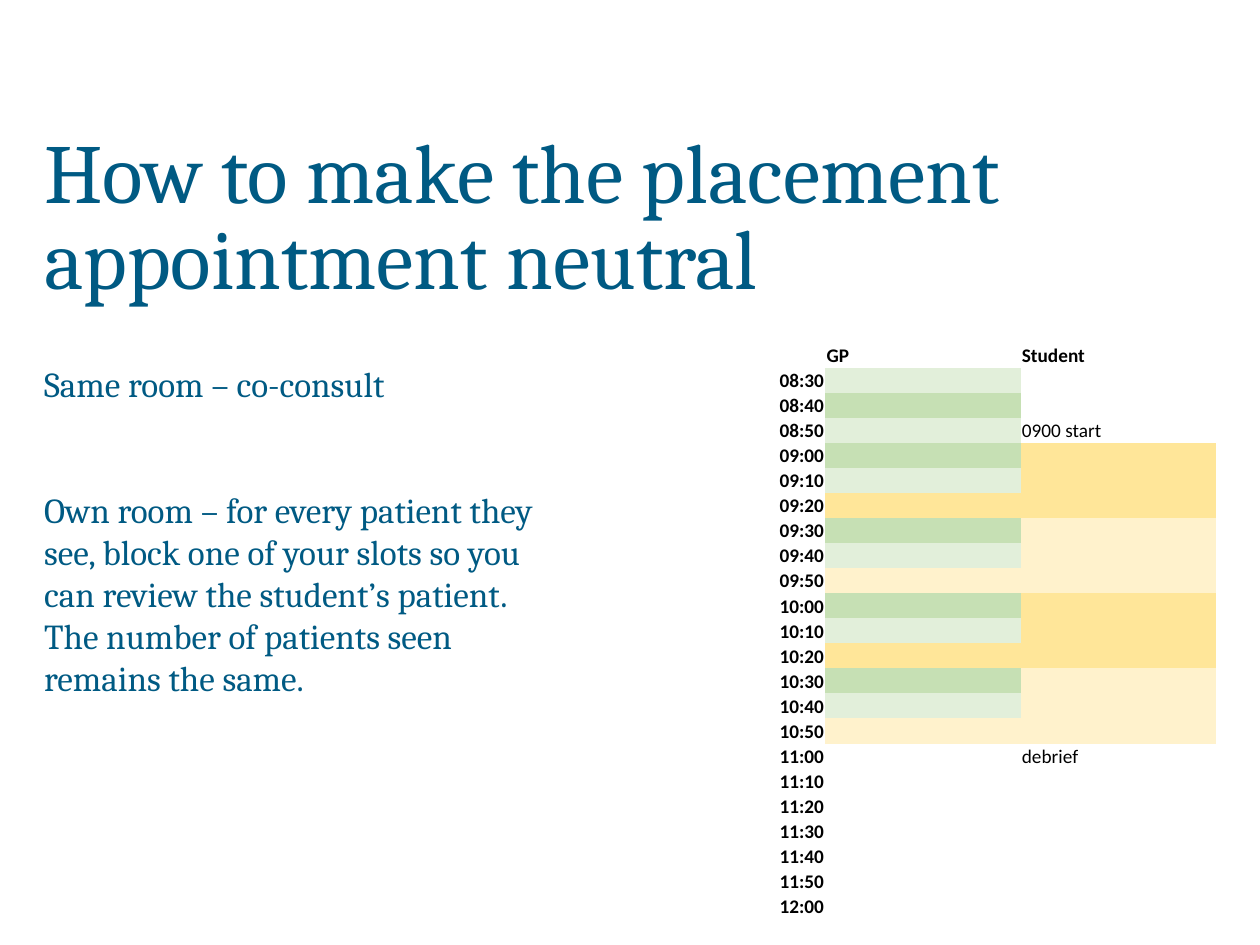
from typing import NamedTuple

from lxml.etree import SubElement
from pptx import Presentation
from pptx.dml.color import RGBColor
from pptx.enum.text import MSO_ANCHOR, PP_ALIGN
from pptx.oxml.ns import qn
from pptx.util import Inches, Pt

BLUE = "005A83"
PALE, GREEN = "E2EFDA", "C6E0B4"
GOLD, CREAM = "FFE699", "FFF2CC"
NO_GRID = "{2D5ABB26-0587-4C30-8999-92F81FD0307C}"
ROWS, COLS = 23, 3


class Box(NamedTuple):
    left: float
    top: float
    width: float
    height: float


class Slot(NamedTuple):
    time: str
    doctor: str = ""
    student: str = ""
    note: str = ""


def color(code: str) -> RGBColor:
    return RGBColor.from_string(code)


def write(para, text: str, *, size=11, font="Calibri", fill="000000",
          bold=False, align=PP_ALIGN.LEFT, after=0, line=1.0) -> None:
    para.alignment = align
    para.space_before = Pt(0)
    para.space_after = Pt(after)
    para.line_spacing = line
    if not text:
        SubElement(para._p, qn("a:endParaRPr"), sz=str(size * 100))
        return
    run = para.add_run()
    run.text = text
    run.font.size = Pt(size)
    run.font.name = font
    run.font.bold = bold
    run.font.color.rgb = color(fill)


def add_box(slide, box: Box):
    frame = slide.shapes.add_textbox(*map(Inches, box)).text_frame
    frame.word_wrap = True
    frame.margin_left = frame.margin_right = 0
    frame.margin_top = frame.margin_bottom = 0
    return frame


def fill_cell(cell, text: str = "", fill: str = "", **style) -> None:
    cell.margin_left = cell.margin_right = cell.margin_top = Inches(0.01)
    cell.margin_bottom = 0
    cell.vertical_anchor = MSO_ANCHOR.BOTTOM
    if fill:
        cell.fill.solid()
        cell.fill.fore_color.rgb = color(fill)
    else:
        cell.fill.background()
    write(cell.text_frame.paragraphs[0], text, **style)


def make_slots() -> list[Slot]:
    notes = {2: "0900 start", 15: "debrief"}
    slots = []
    for i in range(ROWS - 1):
        hour, minute = divmod(510 + 10 * i, 60)
        doctor = student = ""
        if i < 3:
            doctor = (PALE, GREEN)[i % 2]
        elif i < 15:
            block, step = divmod(i - 3, 3)
            student = (GOLD, CREAM)[block % 2]
            doctor = (GREEN, PALE, student)[step]
        time = f"{hour:02}:{minute:02}"
        slots.append(Slot(time, doctor, student, notes.get(i, "")))
    return slots


def add_plan(slide, box: Box, slots: list[Slot]) -> None:
    frame = slide.shapes.add_table(ROWS, COLS, *map(Inches, box))
    table = frame.table
    table.first_row = table.horz_banding = False
    for style in frame._element.iter(qn("a:tableStyleId")):
        style.text = NO_GRID
    for col in table.columns:
        col.width = Inches(box.width / COLS)
    for row in table.rows:
        row.height = Inches(box.height / ROWS)
    for i, head in enumerate(("", "GP", "Student")):
        fill_cell(table.cell(0, i), head, bold=True)
    for i, slot in enumerate(slots, 1):
        fill_cell(table.cell(i, 0), slot.time, bold=True, align=PP_ALIGN.RIGHT)
        fill_cell(table.cell(i, 1), fill=slot.doctor)
        fill_cell(table.cell(i, 2), slot.note, slot.student)


def main() -> None:
    deck = Presentation()
    deck.slide_width, deck.slide_height = Inches(10), Inches(7.5)
    slide = deck.slides.add_slide(deck.slide_layouts[6])
    add_plan(slide, Box(5, 2.72, 4.65, 4.46), make_slots())

    title = add_box(slide, Box(0.35, 1.07, 9.29, 0.79))
    write(title.paragraphs[0], "How to make the placement appointment neutral",
          size=48, font="Cambria", fill=BLUE, line=0.85)

    body = add_box(slide, Box(0.35, 2.88, 4.02, 2.2))
    look = dict(size=20, font="Cambria", fill=BLUE)
    write(body.paragraphs[0], "Same room – co-consult", after=48, **look)
    write(body.add_paragraph(),
          "Own room – for every patient they see, block one of your slots so "
          "you can review the student’s patient. The number of patients seen "
          "remains the same.", after=12, **look)
    deck.save("out.pptx")


if __name__ == "__main__":
    main()
